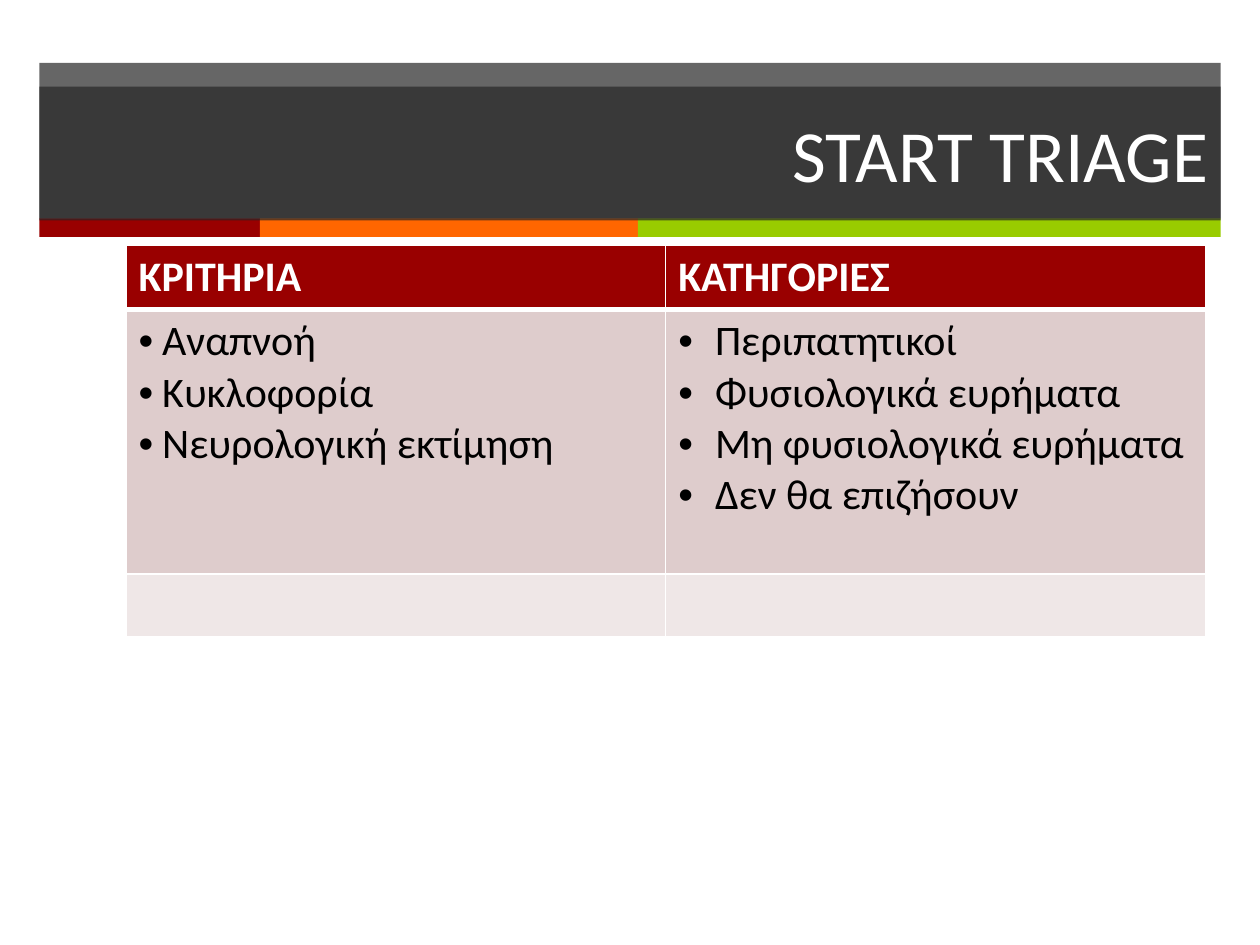
"""Build the START triage slide with its criteria and categories table."""
import pptx
import pptx.dml.color
import pptx.enum.shapes
import pptx.enum.text
import pptx.oxml.ns
import pptx.util
from lxml import etree

Pt = pptx.util.Pt
qn = pptx.oxml.ns.qn

TITLE = "START TRIAGE"
COLUMNS = [
    {"heading": "ΚΡΙΤΗΡΙΑ", "indent": 13.5,
     "items": ["Αναπνοή", "Κυκλοφορία", "Νευρολογική εκτίμηση"]},
    {"heading": "ΚΑΤΗΓΟΡΙΕΣ", "indent": 21,
     "items": ["Περιπατητικοί", "Φυσιολογικά ευρήματα",
               "Μη φυσιολογικά ευρήματα", "Δεν θα επιζήσουν"]},
]
THEME = {
    "font": "Calibri", "title_size": 42, "table_size": 24,
    "white": "FFFFFF", "black": "000000", "band": "262626", "band_alpha": 70,
    "stripes": ["990000", "FF6600", "99CC00"],
    "rows": ["990000", "DECCCC", "EFE7E7"],
}
BAND_LEFT, BAND_WIDTH = 22.5, 675
BANDS = [(36, 89), (49.5, 76.5)]
STRIPE_TOP, STRIPE_HEIGHT = 124.8, 10.6
STRIPE_WIDTHS = [126, 216, 333]
TABLE_LEFT, TABLE_TOP, COLUMN_WIDTH = 72, 140.4, 308.4
ROW_HEIGHTS = [36, 151, 36]


def rgb(value):
    return pptx.dml.color.RGBColor.from_string(value)


def add_bar(page, left, top, width, height, color, alpha=100):
    bar = page.shapes.add_shape(pptx.enum.shapes.MSO_SHAPE.RECTANGLE,
                                Pt(left), Pt(top), Pt(width), Pt(height))
    bar.shadow.inherit = False
    bar.line.fill.background()
    bar.fill.solid()
    bar.fill.fore_color.rgb = rgb(color)
    if alpha < 100:
        tint = bar.fill._xPr.find(qn("a:solidFill"))[0]
        etree.SubElement(tint, qn("a:alpha"), val=str(alpha * 1000))
    return bar


def style_runs(para, size, color, bold=False):
    for span in para.runs:
        span.font.name = THEME["font"]
        span.font.size = Pt(size)
        span.font.bold = bold
        span.font.color.rgb = rgb(color)


def set_borders(cell, bottom):
    properties = cell._tc.get_or_add_tcPr()
    widths = {"a:lnL": 1, "a:lnR": 1, "a:lnT": 1, "a:lnB": bottom}
    for position, (tag, width) in enumerate(widths.items()):
        line = etree.Element(qn(tag), w=str(Pt(width)))
        fill = etree.SubElement(line, qn("a:solidFill"))
        etree.SubElement(fill, qn("a:srgbClr"), val=THEME["white"])
        properties.insert(position, line)


def fill_cell(cell, lines, indent, heading):
    cell.text_frame.text = "\n".join(lines)
    for para in cell.text_frame.paragraphs:
        properties = para._p.get_or_add_pPr()
        properties.set("marL", str(Pt(indent)))
        properties.set("indent", str(-Pt(indent)))
        if not heading:
            etree.SubElement(properties, qn("a:buFont"), typeface="Arial")
            etree.SubElement(properties, qn("a:buChar"), char="•")
        color = THEME["white"] if heading else THEME["black"]
        style_runs(para, THEME["table_size"], color, heading)


def add_header(page):
    for top, height in BANDS[:1]:
        add_bar(page, BAND_LEFT, top, BAND_WIDTH, height, THEME["band"], THEME["band_alpha"])
    left = BAND_LEFT
    for width, color in zip(STRIPE_WIDTHS, THEME["stripes"]):
        add_bar(page, left, STRIPE_TOP, width, STRIPE_HEIGHT, color)
        left += width
    top, height = BANDS[1]
    title = add_bar(page, BAND_LEFT, top, BAND_WIDTH, height, THEME["band"], THEME["band_alpha"])
    title.text_frame.text = TITLE
    title.text_frame.vertical_anchor = pptx.enum.text.MSO_ANCHOR.MIDDLE
    para = title.text_frame.paragraphs[0]
    para.alignment = pptx.enum.text.PP_ALIGN.RIGHT
    style_runs(para, THEME["title_size"], THEME["white"])


def add_triage_table(page):
    table = page.shapes.add_table(
        len(ROW_HEIGHTS), len(COLUMNS), Pt(TABLE_LEFT), Pt(TABLE_TOP),
        Pt(COLUMN_WIDTH * len(COLUMNS)), Pt(sum(ROW_HEIGHTS))).table
    for row, height in enumerate(ROW_HEIGHTS):
        table.rows[row].height = Pt(height)
        for index, column in enumerate(COLUMNS):
            table.columns[index].width = Pt(COLUMN_WIDTH)
            cell = table.cell(row, index)
            cell.fill.solid()
            cell.fill.fore_color.rgb = rgb(THEME["rows"][row])
            set_borders(cell, 3 if row == 0 else 1)
            lines = [[column["heading"]], column["items"], []][row]
            if lines:
                fill_cell(cell, lines, column["indent"], row == 0)


def main():
    deck = pptx.Presentation()
    deck.slide_width, deck.slide_height = Pt(720), Pt(540)
    page = deck.slides.add_slide(deck.slide_layouts[6])
    add_header(page)
    add_triage_table(page)
    deck.save("out.pptx")


if __name__ == "__main__":
    main()
